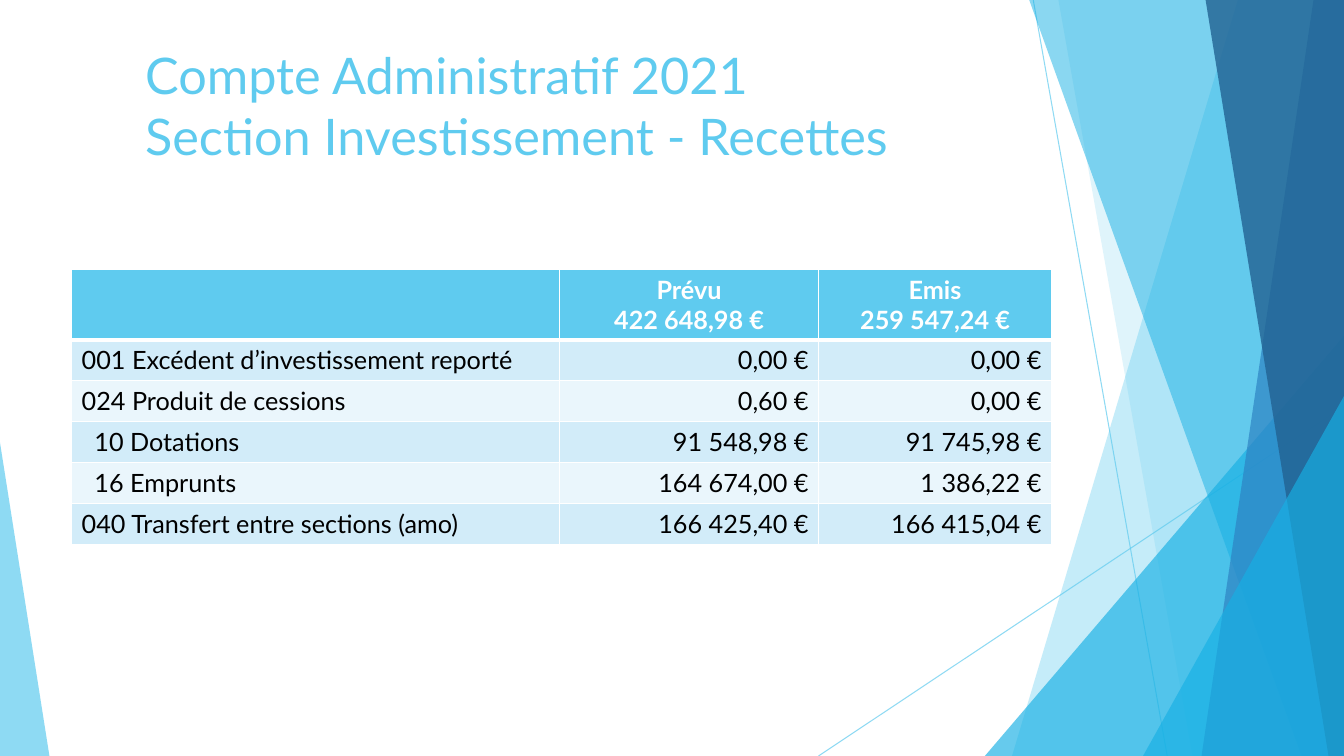
from lxml.etree import SubElement
from pptx import Presentation
from pptx.dml.color import RGBColor as Rgb
from pptx.enum.shapes import MSO_CONNECTOR as Conn, MSO_SHAPE as Shape
from pptx.enum.text import MSO_ANCHOR as Anchor, PP_ALIGN as Align
from pptx.oxml.ns import qn
from pptx.util import Inches, Pt

WIDE, HIGH = Inches(13.33), Inches(7.5)
FONT = "Lato"
SKY = Rgb(0x5F, 0xCB, 0xEF)
CYAN = Rgb(0x17, 0xB0, 0xE4)
BLUE = Rgb(0x2E, 0x83, 0xC3)
NAVY = Rgb(0x22, 0x62, 0x92)
PALE = Rgb(0xD2, 0xEC, 0xF9)
MIST = Rgb(0xEA, 0xF6, 0xFC)
WHITE = Rgb(0xFF, 0xFF, 0xFF)
BLACK = Rgb(0, 0, 0)

RAYS = [(76.88, 0, 86.85, 100), (100, 53.73, 60.9, 100)]
BACK = [(92.1, 75.3, SKY, 36), (78.75, 88.73, SKY, 20)]
FRONT = [(76.58, 96.83, CYAN, 50), (97.73, 89.4, BLUE, 70), (89.7, 98.85, NAVY, 80)]
TITLE = ["Compte Administratif 2021", "Section Investissement - Recettes"]
COLS = [36.3, 19.28, 17.33]
HEAD, ROW = 9.33, 5.42
HEADS = [[], ["Prévu", "422 648,98 €"], ["Emis", "259 547,24 €"]]
ROWS = [
    ("001 Excédent d’investissement reporté", "0,00 €", "0,00 €"),
    ("024 Produit de cessions", "0,60 €", "0,00 €"),
    ("10 Dotations", "91 548,98 €", "91 745,98 €"),
    ("16 Emprunts", "164 674,00 €", "1 386,22 €"),
    ("040 Transfert entre sections (amo)", "166 425,40 €", "166 415,04 €"),
]


def across(share):
    """Turn a percentage of the slide's width into a length."""
    return round(WIDE * share / 100)


def down(share):
    """Turn a percentage of the slide's height into a length."""
    return round(HIGH * share / 100)


def fade(fill, tint, alpha):
    """Fill or stroke with a colour at a percentage of opacity."""
    fill.solid()
    fill.fore_color.rgb = tint
    for node in fill._xPr.iter(qn("a:srgbClr")):
        SubElement(node, qn("a:alpha"), val=str(alpha * 1000))


def paint(shape, tint, alpha):
    """Give a shape a clear fill, no outline and no shadow."""
    shape.shadow.inherit = False
    shape.line.fill.background()
    fade(shape.fill, tint, alpha)


def add_ray(slide, left, top, right, low):
    """Draw a thin slanted line."""
    ray = slide.shapes.add_connector(
        Conn.STRAIGHT, across(left), down(top), across(right), down(low))
    ray.line.width = Pt(0.75)
    fade(ray.line.fill, SKY, 70)
    SubElement(ray._element.spPr, qn("a:effectLst"))


def add_band(slide, top, low, tint, alpha):
    """Draw a full-height band from a slanted edge to the right side."""
    pen = slide.shapes.build_freeform(across(top), 0)
    pen.add_line_segments([(WIDE, 0), (WIDE, HIGH), (across(low), HIGH)])
    paint(pen.convert_to_shape(), tint, alpha)


def add_peak(slide, left, top, width, tip, tint, alpha):
    """Draw a triangle that stands on the bottom edge."""
    peak = slide.shapes.add_shape(
        Shape.ISOSCELES_TRIANGLE, across(left), down(top),
        across(width), HIGH - down(top))
    peak.adjustments[0] = tip
    paint(peak, tint, alpha)


def add_run(para, text, size, tint, bold=False):
    """Add one formatted run to a paragraph."""
    run = para.add_run()
    run.text = text
    font = run.font
    font.name, font.size, font.bold = FONT, Pt(size), bold
    font.color.rgb = tint


def set_title(slide):
    """Place and fill the title placeholder."""
    title = slide.shapes.title
    title.left, title.top = across(10.05), down(5.2)
    title.width, title.height = across(81.23), down(19.2)
    frame = title.text_frame
    frame.word_wrap, frame.vertical_anchor = True, Anchor.TOP
    para = frame.paragraphs[0]
    para.alignment, para.line_spacing = Align.LEFT, 1.0
    add_run(para, TITLE[0], 36, SKY)
    para.add_line_break()
    add_run(para, TITLE[1], 36, SKY)


def set_edges(cell, low):
    """Draw white borders, the lower one with its own width."""
    props = cell._tc.get_or_add_tcPr()
    for spot, (side, width) in enumerate(zip("LRTB", (1, 1, 1, low))):
        edge = SubElement(props, qn(f"a:ln{side}"), w=str(Pt(width)))
        fill = SubElement(edge, qn("a:solidFill"))
        SubElement(fill, qn("a:srgbClr"), val=str(WHITE))
        props.insert(spot, edge)


def set_cell(cell, lines, align, fill, tint, bold=False):
    """Write the lines of a cell and colour it."""
    cell.fill.solid()
    cell.fill.fore_color.rgb = fill
    set_edges(cell, 3 if bold else 1)
    frame = cell.text_frame
    for spot, text in enumerate(lines):
        para = frame.add_paragraph() if spot else frame.paragraphs[0]
        para.alignment = align
        add_run(para, text, 18, tint, bold)


def add_grid(slide):
    """Build the table of planned and issued receipts."""
    grid = slide.shapes.add_table(
        len(ROWS) + 1, len(COLS), across(5.33), down(35.6),
        across(sum(COLS)), down(HEAD + ROW * len(ROWS))).table
    for col, share in zip(grid.columns, COLS):
        col.width = across(share)
    for spot, row in enumerate(grid.rows):
        row.height = down(ROW if spot else HEAD)
    for spot, lines in enumerate(HEADS):
        set_cell(grid.cell(0, spot), lines, Align.CENTER, SKY, WHITE, True)
    for line, texts in enumerate(ROWS, 1):
        for spot, text in enumerate(texts):
            cell = grid.cell(line, spot)
            align = Align.RIGHT if spot else Align.LEFT
            set_cell(cell, [text], align, PALE if line % 2 else MIST, BLACK)
        if texts[0][2] == " ":
            grid.cell(line, 0).margin_left = across(1.7)


def main():
    """Build the slide and save it."""
    deck = Presentation()
    deck.slide_width, deck.slide_height = WIDE, HIGH
    slide = deck.slides.add_slide(deck.slide_layouts[5])
    for ray in RAYS:
        add_ray(slide, *ray)
    for band in BACK:
        add_band(slide, *band)
    add_peak(slide, 73.28, 44.4, 26.72, 1, CYAN, 66)
    for band in FRONT:
        add_band(slide, *band)
    add_peak(slide, 85.05, 52.4, 14.95, 1, CYAN, 66)
    add_peak(slide, 0, 58.53, 3.68, 0, SKY, 70)
    set_title(slide)
    add_grid(slide)
    deck.save("out.pptx")


if __name__ == "__main__":
    main()
